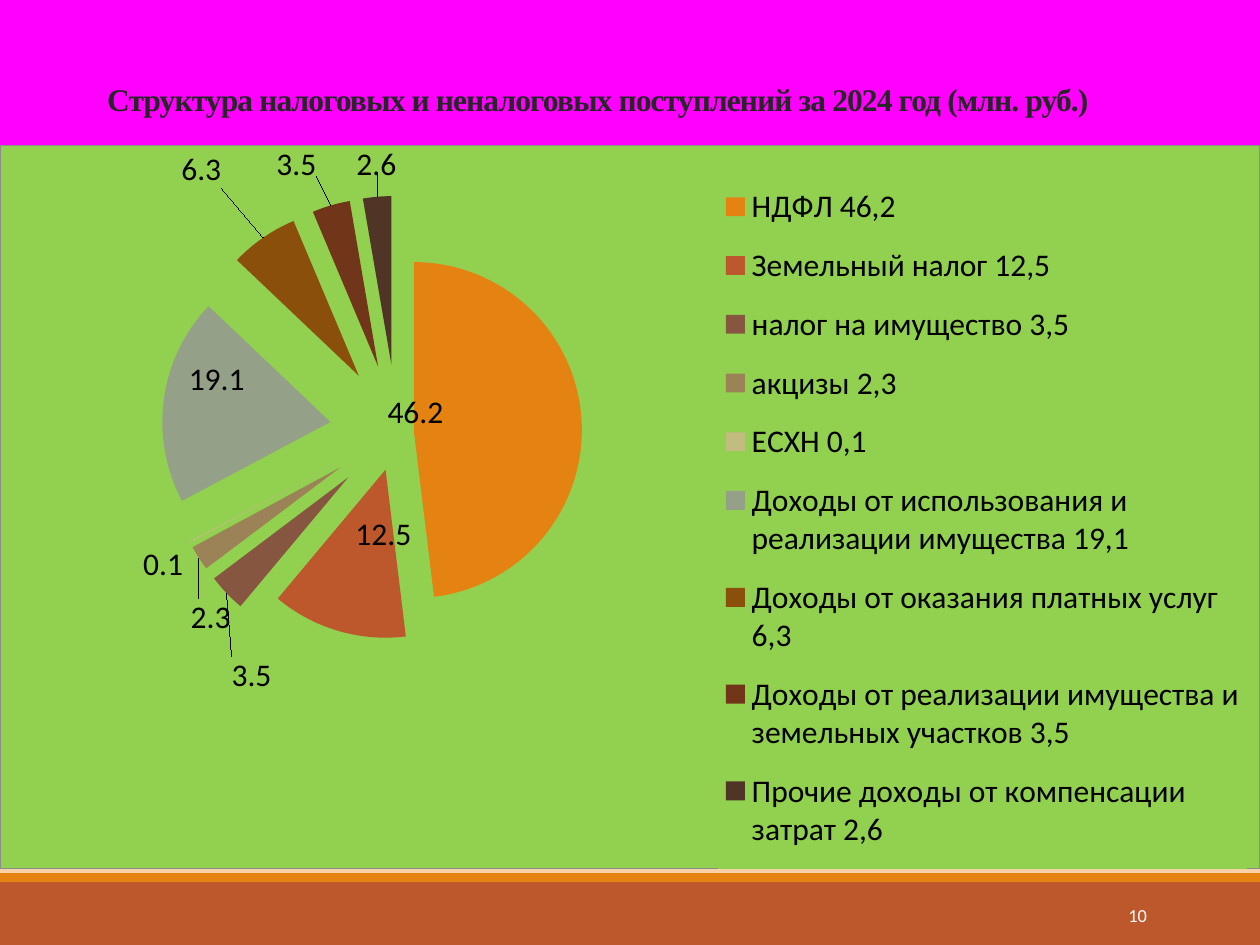
from lxml import etree
from pptx import Presentation
from pptx import util as u
from pptx.chart.data import CategoryChartData
from pptx.dml.color import RGBColor
from pptx.enum import chart as charts, shapes, text
from pptx.oxml import parse_xml
from pptx.oxml.ns import qn, nsdecls

TITLE = "Структура налоговых и неналоговых поступлений за 2024 год (млн. руб.)"
SLICES = [
    ("НДФЛ 46,2 ", 46.2, "E48312", 10, (-0.16, -0.01)),
    ("Земельный налог 12,5", 12.5, "BD582C", 24, (0.06, -0.17)),
    ("налог на имущество 3,5", 3.5, "865640", 40, (0.04, 0.08)),
    ("акцизы 2,3", 2.3, "9B8357", 40, (0.03, 0.05)),
    ("ЕСХН 0,1", 0.1, "C2BC80", 40, None),
    ("Доходы от использования и реализации имущества 19,1", 19.1, "94A088", 40, (0.07, 0)),
    ("Доходы от оказания платных услуг 6,3", 6.3, "894F0B", 40, (-0.03, -0.06)),
    ("Доходы от реализации имущества и земельных участков 3,5", 3.5, "71351A", 40, (-0.01, -0.03)),
    ("Прочие доходы от компенсации затрат 2,6", 2.6, "503426", 40, (0, -0.02)),
]
MAX_EXPLOSION = max(item[3] for item in SLICES)
BACKGROUND = [(55, "FF00FF"), (74, "F6C791"), (83, "F6C791"), (100, "F9DAB6")]
BARS = [(7, 0.5, "BD582C"), (6.93, 0.07, "E48312")]
GREEN = "92D050"


def paint(fill, color):
    fill.solid()
    fill.fore_color.rgb = RGBColor.from_string(color)


def style_font(font, size, color, name="Calibri", bold=False):
    font.size = u.Pt(size)
    font.name = name
    font.bold = bold
    font.color.rgb = RGBColor.from_string(color)


def write(shape, content, size, color, name="Calibri", bold=False, align=None,
          anchor=text.MSO_ANCHOR.MIDDLE, line_spacing=None, tracking=None):
    frame = shape.text_frame
    frame.word_wrap = True
    frame.auto_size = text.MSO_AUTO_SIZE.NONE
    frame.vertical_anchor = anchor
    paragraph = frame.paragraphs[0]
    paragraph.alignment = align
    paragraph.line_spacing = line_spacing
    run = paragraph.add_run()
    run.text = content
    style_font(run.font, size, color, name, bold)
    if tracking is not None:
        run.font._element.set("spc", str(int(tracking * 100)))


def place(shape, left, top, width, height):
    shape.left, shape.top, shape.width, shape.height = map(u.Inches, (left, top, width, height))


def value_element(tag, value):
    element = etree.Element(qn("c:" + tag))
    element.set("val", str(value))
    return element


def manual_layout(target=None, edge=False, **values):
    layout = etree.Element(qn("c:layout"))
    manual = etree.SubElement(layout, qn("c:manualLayout"))
    if target:
        manual.append(value_element("layoutTarget", target))
    if edge:
        manual.extend([value_element(mode, "edge") for mode in ("xMode", "yMode")])
    manual.extend([value_element(key, value) for key, value in values.items()])
    return layout


def area_format(line=""):
    return parse_xml(
        f'<c:spPr {nsdecls("c", "a")}><a:solidFill><a:srgbClr val="{GREEN}"/></a:solidFill>{line}</c:spPr>')


def set_background(slide):
    fill = slide.background.fill
    fill.gradient()
    fill.gradient_angle = 270
    stops = fill._xPr.find(".//" + qn("a:gsLst"))
    for stop in list(stops):
        stops.remove(stop)
    for position, color in BACKGROUND:
        stop = etree.SubElement(stops, qn("a:gs"), pos=str(position * 1000))
        etree.SubElement(stop, qn("a:srgbClr"), val=color)


def add_pie(slide):
    data = CategoryChartData(number_format="#,##0.0")
    data.categories = [item[0] for item in SLICES]
    data.add_series("Series 1", [item[1] for item in SLICES])
    box = map(u.Inches, (0, 1.15, 10, 5.75))
    chart = slide.shapes.add_chart(charts.XL_CHART_TYPE.PIE, *box, data).chart
    chart.has_title = False
    style_font(chart.font, 18, "000000")
    space = chart._chartSpace
    border = '<a:ln w="6350"><a:solidFill><a:srgbClr val="8C8C8C"/></a:solidFill></a:ln>'
    space.find(qn("c:chart")).addnext(area_format(border))

    plot_area = space.find(".//" + qn("c:plotArea"))
    for old in plot_area.findall(qn("c:layout")):
        plot_area.remove(old)
    plot_area.insert(0, manual_layout("inner", True, x=0.02, y=0.07, w=0.59, h=0.65))

    chart.has_legend = True
    legend = chart.legend
    legend.position = charts.XL_LEGEND_POSITION.RIGHT
    legend.include_in_layout = False
    style_font(legend.font, 18, "000000")
    element = legend._element
    for old in element.findall(qn("c:layout")):
        element.remove(old)
    element.find(qn("c:legendPos")).addnext(manual_layout(edge=True, x=0.57, y=0.03, w=0.42, h=0.97))
    element.find(qn("c:overlay")).addnext(area_format())

    chart.plots[0].vary_by_categories = True
    series = chart.plots[0].series[0]
    labels = series.data_labels
    labels.show_value = True
    labels.number_format = "#,##0.0"
    labels.number_format_is_linked = False
    labels.position = charts.XL_LABEL_POSITION.OUTSIDE_END
    style_font(labels.font, 18, "000000")
    for old in labels._element.findall(qn("c:showLeaderLines")):
        labels._element.remove(old)
    labels._element.append(value_element("showLeaderLines", 1))

    for index, (_, _, color, explosion, offset) in enumerate(SLICES):
        point = series.points[index]
        paint(point.format.fill, color)
        properties = series._element.findall(qn("c:dPt"))[index].find(qn("c:spPr"))
        properties.addprevious(value_element("explosion", explosion))
        if offset:
            label = point.data_label
            style_font(label.font, 18, "000000")
            label.position = charts.XL_LABEL_POSITION.OUTSIDE_END
            node = labels._element.findall(qn("c:dLbl"))[-1]
            node.find(qn("c:idx")).addnext(manual_layout(x=offset[0], y=offset[1]))
    series._element.find(qn("c:dPt")).addprevious(value_element("explosion", MAX_EXPLOSION))


def main():
    presentation = Presentation()
    presentation.slide_width, presentation.slide_height = u.Inches(10), u.Inches(7.5)
    slide = presentation.slides.add_slide(presentation.slide_layouts[5])
    set_background(slide)

    for top, height, color in BARS:
        bar = slide.shapes.add_shape(
            shapes.MSO_SHAPE.RECTANGLE, *map(u.Inches, (0, top, 10, height)))
        bar.shadow.inherit = False
        paint(bar.fill, color)
        bar.line.fill.background()

    title = slide.shapes.title
    place(title, 0.75, 0.13, 8.4, 0.86)
    write(title, TITLE, 18, "262626", name="Times New Roman", bold=True,
          align=text.PP_ALIGN.LEFT, anchor=text.MSO_ANCHOR.BOTTOM,
          line_spacing=0.85, tracking=-0.5)

    number = slide.shapes.add_textbox(*map(u.Inches, (8.12, 7.06, 1.08, 0.4)))
    write(number, "10", 10.5, "FFFFFF", align=text.PP_ALIGN.RIGHT)

    add_pie(slide)
    presentation.save("out.pptx")


if __name__ == "__main__":
    main()
